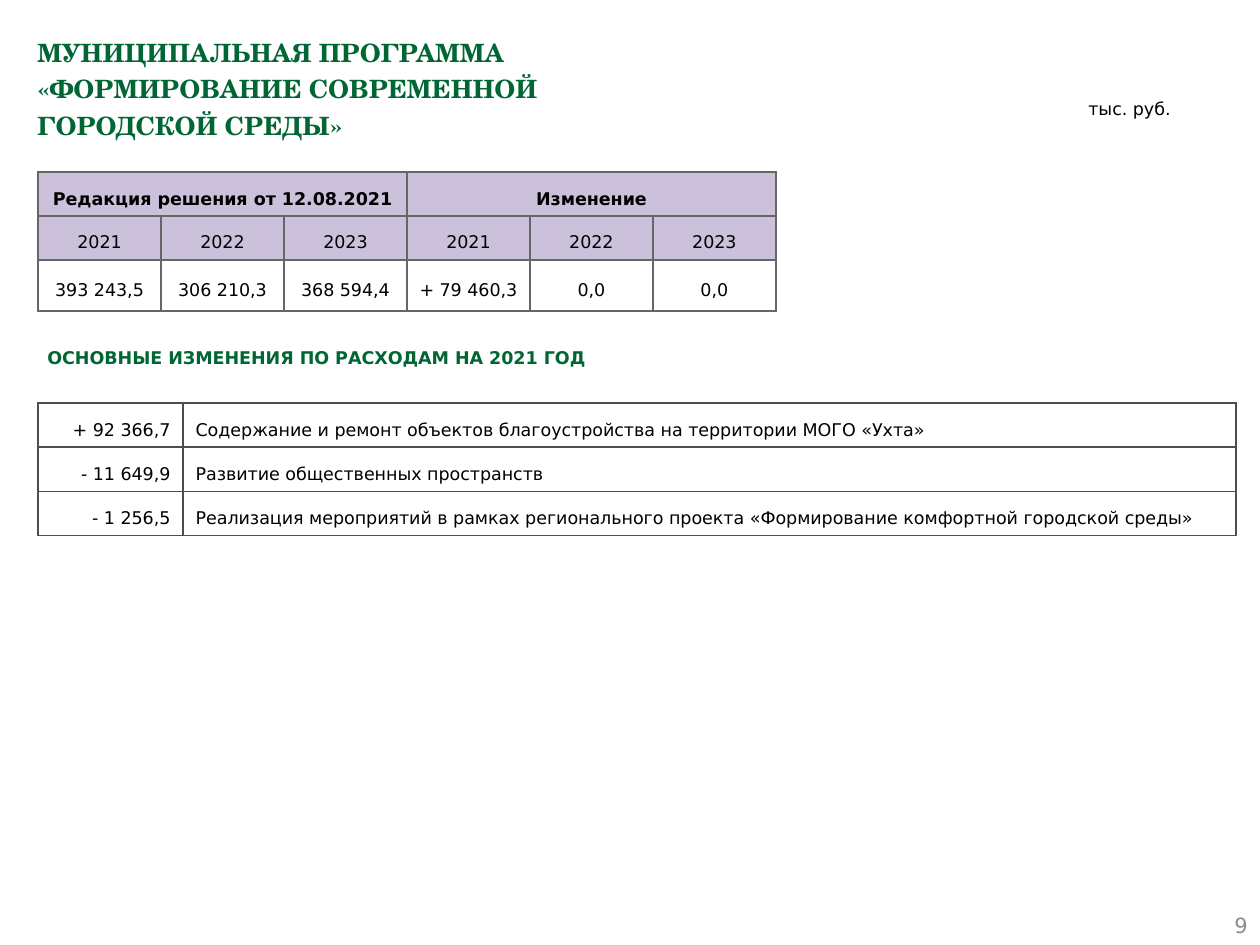
from lxml.etree import SubElement
from pptx import Presentation
from pptx.dml.color import RGBColor
from pptx.enum.shapes import MSO_SHAPE as Shape
from pptx.enum.text import MSO_ANCHOR as Anchor, PP_ALIGN as Align
from pptx.oxml.ns import qn
from pptx.util import Emu, Pt

COLORS = {"green": "006633", "black": "000000", "gray": "8C8C8C",
          "lilac": "CCC1DA", "dark_border": "4D4D4D", "border": "666666"}
SANS = "DejaVu Sans"
SERIF = "TeX Gyre Schola"


def px(value):
    return Emu(round(value * 914400 / 126))


def write(frame, text, color="black", size=10, bold=False, font=SANS,
          align=Align.LEFT, spacing=1.0):
    frame.text = text
    for para in frame.paragraphs:
        para.alignment = align
        para.line_spacing = spacing
        for span in para.runs:
            span.font.name = font
            span.font.size = Pt(size)
            span.font.bold = bold
            span.font.color.rgb = RGBColor.from_string(COLORS[color])


deck = Presentation()
deck.slide_width, deck.slide_height = px(1260), px(945)
page = deck.slides.add_slide(deck.slide_layouts[6])

title = page.shapes.add_textbox(px(25), px(25), px(1211), px(100))
title.text_frame.word_wrap = True
write(title.text_frame,
      "МУНИЦИПАЛЬНАЯ ПРОГРАММА\n«ФОРМИРОВАНИЕ СОВРЕМЕННОЙ\nГОРОДСКОЙ СРЕДЫ»",
      "green", 14.4, True, SERIF, spacing=1.2)

number = page.shapes.add_textbox(px(966), px(900), px(294), px(50))
number.text_frame.word_wrap = True
number.text_frame.vertical_anchor = Anchor.MIDDLE
write(number.text_frame, "9", "gray", 12, align=Align.RIGHT)

heading = page.shapes.add_shape(Shape.PENTAGON, px(35), px(330), px(670), px(54))
heading.adjustments[0] = 0
heading.shadow.inherit = False
heading.fill.background()
heading.line.fill.background()
heading.text_frame.vertical_anchor = Anchor.MIDDLE
write(heading.text_frame, "ОСНОВНЫЕ ИЗМЕНЕНИЯ ПО РАСХОДАМ НА 2021 ГОД", "green", bold=True)

units = page.shapes.add_textbox(px(1076), px(88), px(127), px(38))
units.text_frame.word_wrap = True
write(units.text_frame, "тыс. руб.", spacing=1.2)

years = ["2021", "2022", "2023"]
budget_rows = [
    ["Редакция решения от 12.08.2021", "", "", "Изменение", "", ""],
    years * 2,
    ["393 243,5", "306 210,3", "368 594,4", "+ 79 460,3", "0,0", "0,0"],
]
change_rows = [
    ["+ 92 366,7", "Содержание и ремонт объектов благоустройства на территории МОГО «Ухта»"],
    ["- 11 649,9", "Развитие общественных пространств"],
    ["- 1 256,5", "Реализация мероприятий в рамках регионального проекта "
                  "«Формирование комфортной городской среды»"],
]
tables = [
    (change_rows, 403, [145, 1053], [43, 43, 43], "dark_border", 0,
     [Align.RIGHT, Align.LEFT], None),
    (budget_rows, 172, [123] * 6, [44, 44, 51], "border", 2,
     [Align.CENTER] * 6, 6),
]

for rows, top, widths, heights, border, header_rows, aligns, inset in tables:
    grid = page.shapes.add_table(len(rows), len(widths), px(38), px(top),
                                 px(sum(widths)), px(sum(heights))).table
    grid.first_row = grid.horz_banding = False
    for column, width in zip(grid.columns, widths):
        column.width = px(width)
    for row, height in zip(grid.rows, heights):
        row.height = px(height)
    for r, texts in enumerate(rows):
        for c, text in enumerate(texts):
            cell = grid.cell(r, c)
            cell.vertical_anchor = Anchor.MIDDLE
            if inset:
                cell.margin_left = cell.margin_right = px(inset)
                cell.margin_top = cell.margin_bottom = px(inset)
            write(cell.text_frame, text, bold=header_rows > 0 and r == 0,
                  align=aligns[c], spacing=1.5)
            props = cell._tc.get_or_add_tcPr()
            for side in ("a:lnL", "a:lnR", "a:lnT", "a:lnB"):
                line = SubElement(props, qn(side), w=str(Pt(1)))
                solid = SubElement(line, qn("a:solidFill"))
                SubElement(solid, qn("a:srgbClr"), val=COLORS[border])
            if r < header_rows:
                cell.fill.solid()
                cell.fill.fore_color.rgb = RGBColor.from_string(COLORS["lilac"])
            else:
                cell.fill.background()
    if header_rows:
        for start in (0, 3):
            grid.cell(0, start).merge(grid.cell(0, start + 2))

deck.save("out.pptx")
